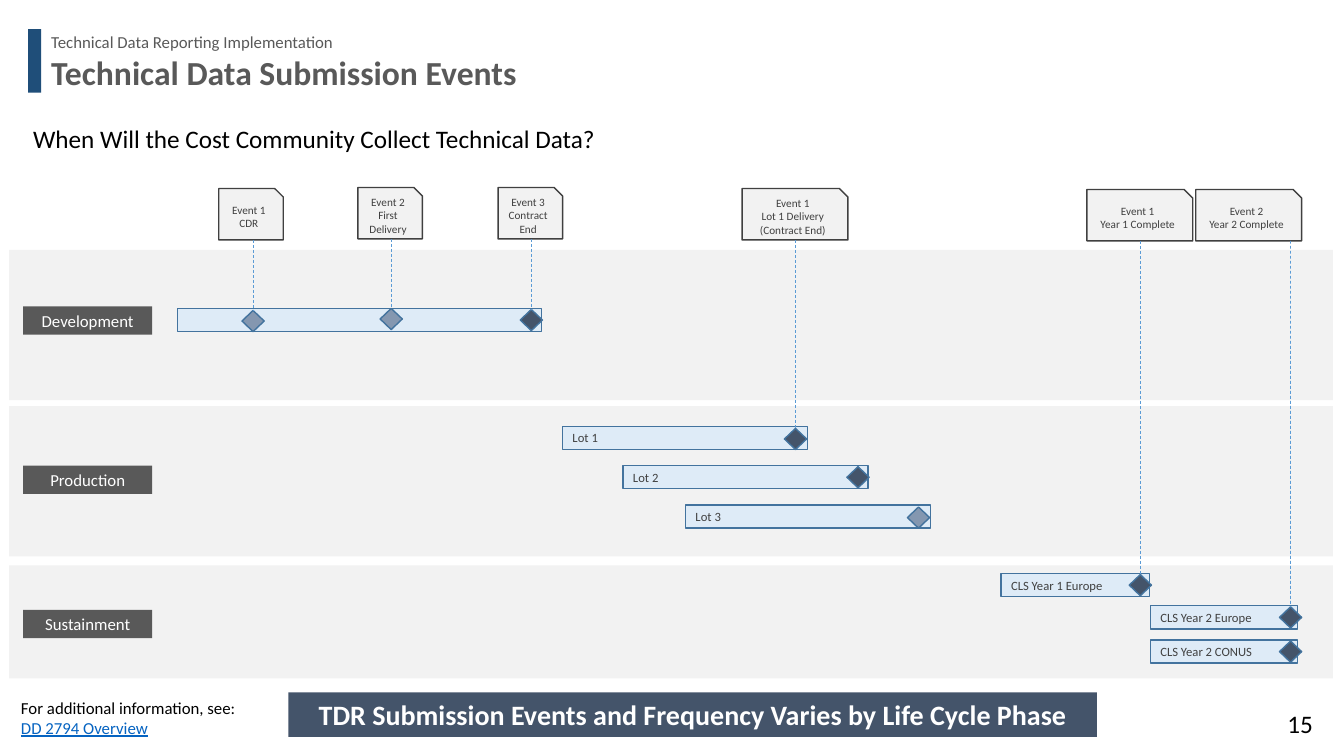
from lxml import etree
from pptx import Presentation
from pptx.dml.color import RGBColor
from pptx.enum.dml import MSO_LINE
from pptx.enum.shapes import MSO_CONNECTOR, MSO_SHAPE
from pptx.enum.text import MSO_ANCHOR, PP_ALIGN
from pptx.oxml.ns import qn
from pptx.util import Inches, Pt

COLORS = {
    "accent": "1F4E79", "band": "F2F2F2", "gray": "595959", "slate": "44546A",
    "light_slate": "8497B0", "bar": "DEEBF7", "outline": "43739E", "dark": "404040",
    "dash": "5B9BD5", "link": "0563C1", "black": "000000", "white": "FFFFFF",
}

presentation = Presentation()
presentation.slide_width = Inches(13.33)
presentation.slide_height = Inches(7.5)
slide = presentation.slides.add_slide(presentation.slide_layouts[6])


def add_box(kind, left, top, width, height, fill=None, line=None):
    """Add a preset shape, or a text box when kind is None."""
    place = [Inches(value) for value in (left, top, width, height)]
    if kind is None:
        return slide.shapes.add_textbox(*place)
    shape = slide.shapes.add_shape(kind, *place)
    shape.shadow.inherit = False
    shape.fill.solid()
    shape.fill.fore_color.rgb = RGBColor.from_string(COLORS[fill])
    if line:
        shape.line.color.rgb = RGBColor.from_string(COLORS[line])
        shape.line.width = Pt(1)
    else:
        shape.line.fill.background()
    return shape


def write(shape, lines, size, color, bold=False, align=PP_ALIGN.LEFT,
          anchor=MSO_ANCHOR.TOP, spacing=None):
    """Fill a shape with one paragraph per line and return the runs."""
    frame = shape.text_frame
    frame.word_wrap = True
    frame.vertical_anchor = anchor
    runs = []
    for index, text in enumerate(lines):
        paragraph = frame.add_paragraph() if index else frame.paragraphs[0]
        paragraph.alignment = align
        paragraph.line_spacing = spacing
        run = paragraph.add_run()
        run.text = text
        run.font.name = "Calibri"
        run.font.size = Pt(size)
        run.font.bold = bold
        run.font.color.rgb = RGBColor.from_string(COLORS[color])
        runs.append(run)
    return runs


# Header
add_box(MSO_SHAPE.RECTANGLE, 0.28, 0.29, 0.13, 0.63, "accent")
write(add_box(None, 0.41, 0.29, 4.73, 0.3),
      ["Technical Data Reporting Implementation"], 12, "gray", spacing=0.9)
write(add_box(None, 0.41, 0.51, 5.28, 0.55),
      ["Technical Data Submission Events"], 24, "gray", bold=True, spacing=0.9)
write(add_box(None, 0.23, 1.17, 9.53, 0.71),
      ["When Will the Cost Community Collect Technical Data?"], 18, "black")

# Life cycle phases: name, band top, band height, label top
phases = [
    ("Development", 2.48, 1.49, 3.04),
    ("Production", 4.03, 1.49, 4.62),
    ("Sustainment", 5.61, 1.12, 6.05),
]
for name, band_top, band_height, label_top in phases:
    add_box(MSO_SHAPE.RECTANGLE, 0.09, band_top, 13.13, band_height, "band")
    label = add_box(MSO_SHAPE.RECTANGLE, 0.23, label_top, 1.28, 0.28, "gray")
    write(label, [name], 12, "white", align=PP_ALIGN.CENTER, anchor=MSO_ANCHOR.MIDDLE)

# Schedule bars: text, left, top, width
bars = [
    ("", 1.76, 3.06, 3.61),
    ("Lot 1", 5.58, 4.23, 2.43),
    ("Lot 2", 6.18, 4.62, 2.43),
    ("Lot 3", 6.8, 5.01, 2.43),
    ("CLS Year 1 Europe", 9.93, 5.69, 1.47),
    ("CLS Year 2 Europe", 11.41, 6.01, 1.46),
    ("CLS Year 2 CONUS", 11.41, 6.35, 1.46),
]
for text, left, top, width in bars:
    bar = add_box(MSO_SHAPE.RECTANGLE, left, top, width, 0.23, "bar", "outline")
    if text:
        write(bar, [text], 9, "dark", anchor=MSO_ANCHOR.MIDDLE)

# Milestones: left, top, fill, event card (lines, left, top, width) or None
milestones = [
    (2.4, 3.08, "light_slate", (["Event 1 CDR"], 2.17, 1.87, 0.64)),
    (3.77, 3.06, "light_slate", (["Event 2 First Delivery"], 3.55, 1.86, 0.64)),
    (5.16, 3.07, "slate", (["Event 3 Contract End"], 4.94, 1.86, 0.64)),
    (7.78, 4.25, "slate",
     (["Event 1", "Lot 1 Delivery", "(Contract End)"], 7.36, 1.87, 1.05)),
    (8.4, 4.63, "slate", None),
    (9, 5.03, "light_slate", None),
    (11.2, 5.7, "slate", (["Event 1", "Year 1 Complete"], 10.78, 1.88, 1.05)),
    (12.69, 6.02, "slate", (["Event 2", "Year 2 Complete"], 11.86, 1.88, 1.05)),
    (12.69, 6.36, "slate", None),
]
for left, top, fill, event in milestones:
    diamond = add_box(MSO_SHAPE.DIAMOND, left, top, 0.22, 0.21, fill, "outline")
    if event is None:
        continue
    lines, card_left, card_top, card_width = event
    card = add_box(MSO_SHAPE.SNIP_1_RECTANGLE, card_left, card_top, card_width, 0.51,
                   "band", "dark")
    write(card, lines, 8, "dark", align=PP_ALIGN.CENTER, anchor=MSO_ANCHOR.MIDDLE)
    center = Inches(left + 0.11)
    connector = slide.shapes.add_connector(
        MSO_CONNECTOR.STRAIGHT, center, Inches(card_top + 0.51), center, Inches(top))
    connector.end_connect(diamond, 0)
    connector.line.color.rgb = RGBColor.from_string(COLORS["dash"])
    connector.line.width = Pt(0.5)
    connector.line.dash_style = MSO_LINE.DASH
    etree.SubElement(connector._element.spPr, qn("a:effectLst"))

# Footer
banner = add_box(MSO_SHAPE.RECTANGLE, 2.86, 6.87, 8.02, 0.44, "slate")
write(banner, ["TDR Submission Events and Frequency Varies by Life Cycle Phase"],
      20, "white", bold=True, align=PP_ALIGN.CENTER)
reference = write(add_box(None, 0.11, 6.87, 2.49, 0.5),
                  ["For additional information, see:", "DD 2794 Overview"], 12, "black")[1]
reference.font.color.rgb = RGBColor.from_string(COLORS["link"])
reference.font.underline = True
write(add_box(None, 12.67, 6.98, 0.55, 0.4), ["15"], 18, "black")

presentation.save("out.pptx")
